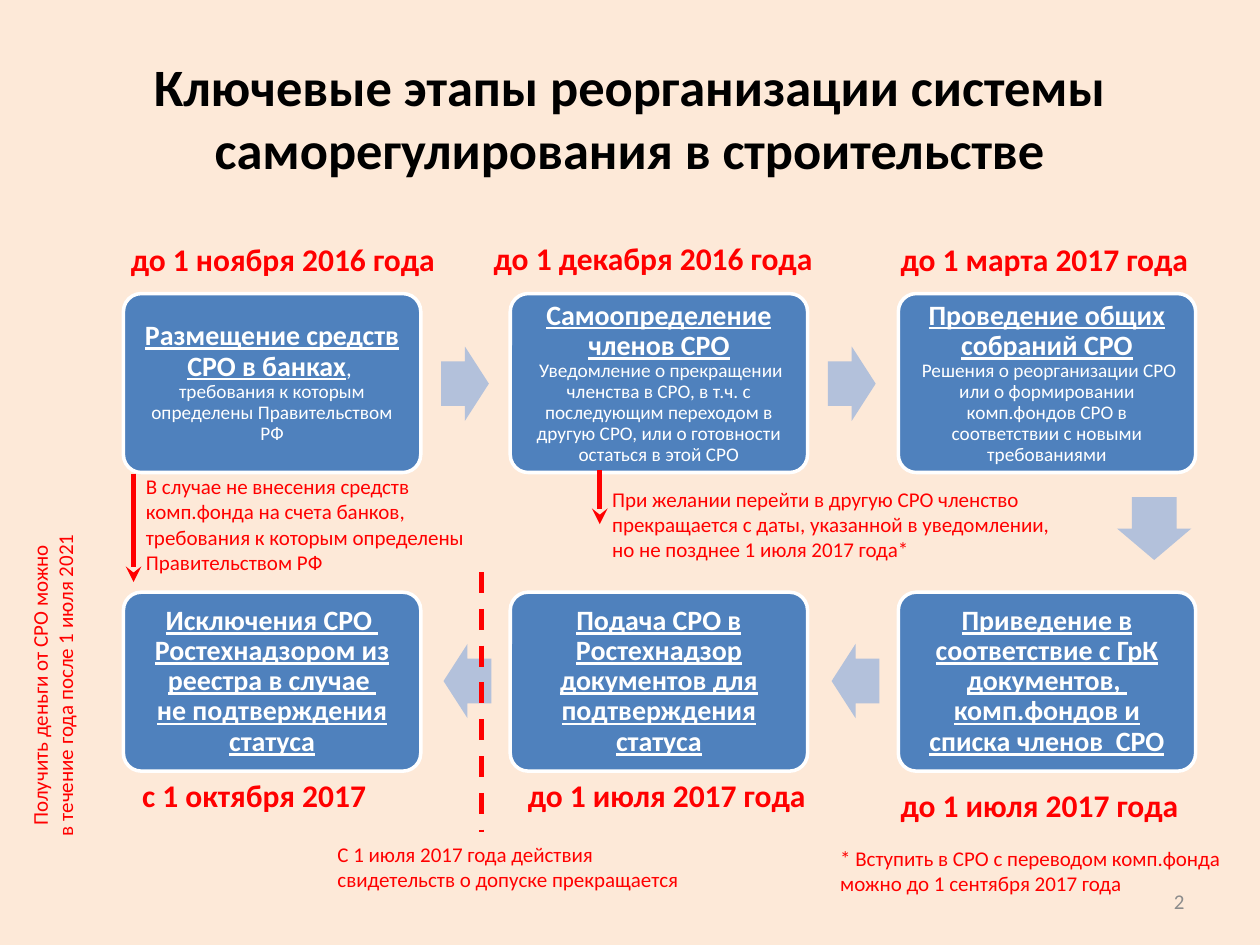
from copy import deepcopy
from dataclasses import dataclass

from lxml.etree import SubElement
from pptx import Presentation
from pptx.dml.color import RGBColor
from pptx.enum.dml import MSO_LINE
from pptx.enum.shapes import MSO_CONNECTOR, MSO_SHAPE
from pptx.enum.text import MSO_ANCHOR, MSO_AUTO_SIZE, PP_ALIGN
from pptx.oxml.ns import qn
from pptx.util import Inches, Pt

BACKGROUND = RGBColor(0xFD, 0xE9, 0xD8)
BLUE = RGBColor(0x4F, 0x81, 0xBD)
PALE_BLUE = RGBColor(0xB3, 0xC1, 0xDB)
WHITE = RGBColor(0xFF, 0xFF, 0xFF)
RED = RGBColor(0xFF, 0x00, 0x00)
BLACK = RGBColor(0x00, 0x00, 0x00)
GRAY = RGBColor(0x8C, 0x8C, 0x8C)
FONT = "Calibri"
COLUMNS = (0.98, 4.05, 7.13)
ROWS = (2.33, 4.7)
CARD_WIDTH, CARD_HEIGHT = 2.36, 1.42


@dataclass
class Card:
    column: int
    row: int
    heading: str
    detail: str = ""
    separator: str = ""
    margin_x: float = 0.07
    margin_y: float = 0.07


@dataclass
class BlockArrow:
    left: float
    top: float
    width: float = 0.38
    rotation: int = 0


@dataclass
class Label:
    left: float
    top: float
    width: float
    height: float
    text: str
    size: int = 12
    bold: bool = False
    wrap: bool = True
    rotation: int = 0
    align: PP_ALIGN = PP_ALIGN.LEFT
    color: RGBColor = RED


@dataclass
class Line:
    x: float
    top: float
    bottom: float
    dashed: bool = False


CARDS = [
    Card(0, 0, "Размещение средств СРО в банках",
         "требования к которым определены Правительством РФ", ", \n"),
    Card(1, 0, "Самоопределение членов СРО\n",
         " Уведомление о прекращении членства в СРО, в т.ч. с последующим "
         "переходом в другую СРО, или о готовности остаться в этой СРО"),
    Card(2, 0, "Проведение общих собраний СРО\n",
         " Решения о реорганизации СРО или о формировании комп.фондов СРО "
         "в соответствии с новыми требованиями"),
    Card(2, 1, "Приведение в соответствие с ГрК документов,  комп.фондов "
               "и списка членов  СРО"),
    Card(1, 1, "Подача СРО в Ростехнадзор документов для подтверждения статуса"),
    Card(0, 1, "Исключения СРО  Ростехнадзором из реестра в случае \n"
               "не подтверждения статуса", margin_x=0, margin_y=0.04),
]
BLOCK_ARROWS = [
    BlockArrow(3.5, 2.75),
    BlockArrow(6.57, 2.75),
    BlockArrow(8.91, 3.9, 0.5, 90),
    BlockArrow(6.6, 5.11, rotation=180),
    BlockArrow(3.52, 5.11, rotation=180),
]
DATES = [
    (0.94, 1.86, 2.65, "до 1 ноября 2016 года"),
    (3.82, 1.85, 2.75, "до 1 декабря 2016 года"),
    (7.05, 1.86, 2.5, "до 1 марта 2017 года"),
    (7.05, 6.19, 2.43, "до 1 июля 2017 года"),
    (4.09, 6.11, 2.48, "до 1 июля 2017 года"),
    (1.03, 6.11, 2, "с 1 октября 2017"),
]
LABELS = [Label(x, y, w, 0.4, text, 18, True, False) for x, y, w, text in DATES] + [
    Label(2.58, 6.63, 2.97, 0.5,
          "С 1 июля 2017 года действия свидетельств о допуске прекращается"),
    Label(1.06, 3.71, 2.8, 0.91,
          "В случае не внесения средств \nкомп.фонда на счета банков, \n"
          "требования к которым определены \nПравительством РФ", wrap=False),
    Label(4.76, 3.81, 4.41, 0.71,
          "При желании перейти в другую СРО членство прекращается с даты, "
          "указанной в уведомлении, \nно не позднее 1 июля 2017 года*"),
    Label(6.57, 6.66, 3.23, 0.5,
          "* Вступить в СРО с переводом комп.фонда можно до 1 сентября 2017 года"),
    Label(-1.2, 5.17, 3.23, 0.5,
          "Получить деньги от СРО можно \nв течение года после 1 июля 2021 ",
          rotation=270, align=PP_ALIGN.CENTER),
    Label(7.17, 6.95, 2.33, 0.4, "2", align=PP_ALIGN.RIGHT, color=GRAY),
]
LINES = [Line(3.82, 4.54, 6.6, True), Line(1.06, 3.76, 4.62), Line(4.76, 3.73, 4.16)]


def add_text(p, text: str, size: int, color: RGBColor,
             bold: bool = False, underline: bool = False) -> None:
    r = None
    for i, part in enumerate(text.split("\n")):
        if i:
            p.add_line_break()
            p._p.findall(qn("a:br"))[-1].append(deepcopy(r._r.rPr))
        if part:
            r = p.add_run()
            r.text = part
            r.font.name = FONT
            r.font.size = Pt(size)
            r.font.bold = bold
            r.font.underline = underline
            r.font.color.rgb = color


def add_card(s, card: Card) -> None:
    sp = s.shapes.add_shape(
        MSO_SHAPE.ROUNDED_RECTANGLE, Inches(COLUMNS[card.column]),
        Inches(ROWS[card.row]), Inches(CARD_WIDTH), Inches(CARD_HEIGHT))
    sp.adjustments[0] = 0.1
    sp.shadow.inherit = False
    sp.fill.solid()
    sp.fill.fore_color.rgb = BLUE
    sp.line.color.rgb = WHITE
    sp.line.width = Pt(2)
    tf = sp.text_frame
    tf.word_wrap = True
    tf.vertical_anchor = MSO_ANCHOR.MIDDLE
    tf.margin_left = tf.margin_right = Inches(card.margin_x)
    tf.margin_top = tf.margin_bottom = Inches(card.margin_y)
    p = tf.paragraphs[0]
    p.alignment = PP_ALIGN.CENTER
    p.line_spacing = 0.9
    add_text(p, card.heading, 16, WHITE, bold=True, underline=True)
    if card.separator:
        add_text(p, card.separator, 13, WHITE)
    if card.detail:
        add_text(p, card.detail, 11, WHITE)


def add_block_arrow(s, arrow: BlockArrow) -> None:
    sp = s.shapes.add_shape(MSO_SHAPE.RIGHT_ARROW, Inches(arrow.left),
                            Inches(arrow.top), Inches(arrow.width), Inches(0.59))
    sp.adjustments[0] = 0.6
    sp.adjustments[1] = 0.5
    sp.rotation = arrow.rotation
    sp.shadow.inherit = False
    sp.fill.solid()
    sp.fill.fore_color.rgb = PALE_BLUE
    sp.line.fill.background()


def add_label(s, label: Label) -> None:
    sp = s.shapes.add_textbox(Inches(label.left), Inches(label.top),
                              Inches(label.width), Inches(label.height))
    sp.rotation = label.rotation
    tf = sp.text_frame
    tf.word_wrap = label.wrap
    tf.auto_size = MSO_AUTO_SIZE.SHAPE_TO_FIT_TEXT
    if label.color == GRAY:
        tf.auto_size = MSO_AUTO_SIZE.NONE
        tf.vertical_anchor = MSO_ANCHOR.MIDDLE
    p = tf.paragraphs[0]
    p.alignment = label.align
    add_text(p, label.text, label.size, label.color, label.bold)


def add_line(s, line: Line) -> None:
    sp = s.shapes.add_connector(MSO_CONNECTOR.STRAIGHT, Inches(line.x),
                                Inches(line.top), Inches(line.x), Inches(line.bottom))
    sp.line.color.rgb = RED
    sp.line.width = Pt(3)
    if line.dashed:
        sp.line.dash_style = MSO_LINE.DASH
    else:
        SubElement(sp.line._get_or_add_ln(), qn("a:tailEnd"), type="stealth")
    SubElement(sp._element.spPr, qn("a:effectLst"))


def main() -> None:
    prs = Presentation()
    prs.slide_width, prs.slide_height = Inches(10), Inches(7.5)
    s = prs.slides.add_slide(prs.slide_layouts[5])
    s.background.fill.solid()
    s.background.fill.fore_color.rgb = BACKGROUND
    title = s.shapes.title
    title.left, title.top = Inches(0.5), Inches(0.3)
    title.width, title.height = Inches(9), Inches(1.25)
    p = title.text_frame.paragraphs[0]
    p.alignment = PP_ALIGN.CENTER
    add_text(p, "Ключевые этапы реорганизации системы саморегулирования "
                "в строительстве", 30, BLACK, bold=True)
    for draw, items in ((add_card, CARDS), (add_block_arrow, BLOCK_ARROWS),
                        (add_line, LINES), (add_label, LABELS)):
        for item in items:
            draw(s, item)
    prs.save("out.pptx")


if __name__ == "__main__":
    main()
